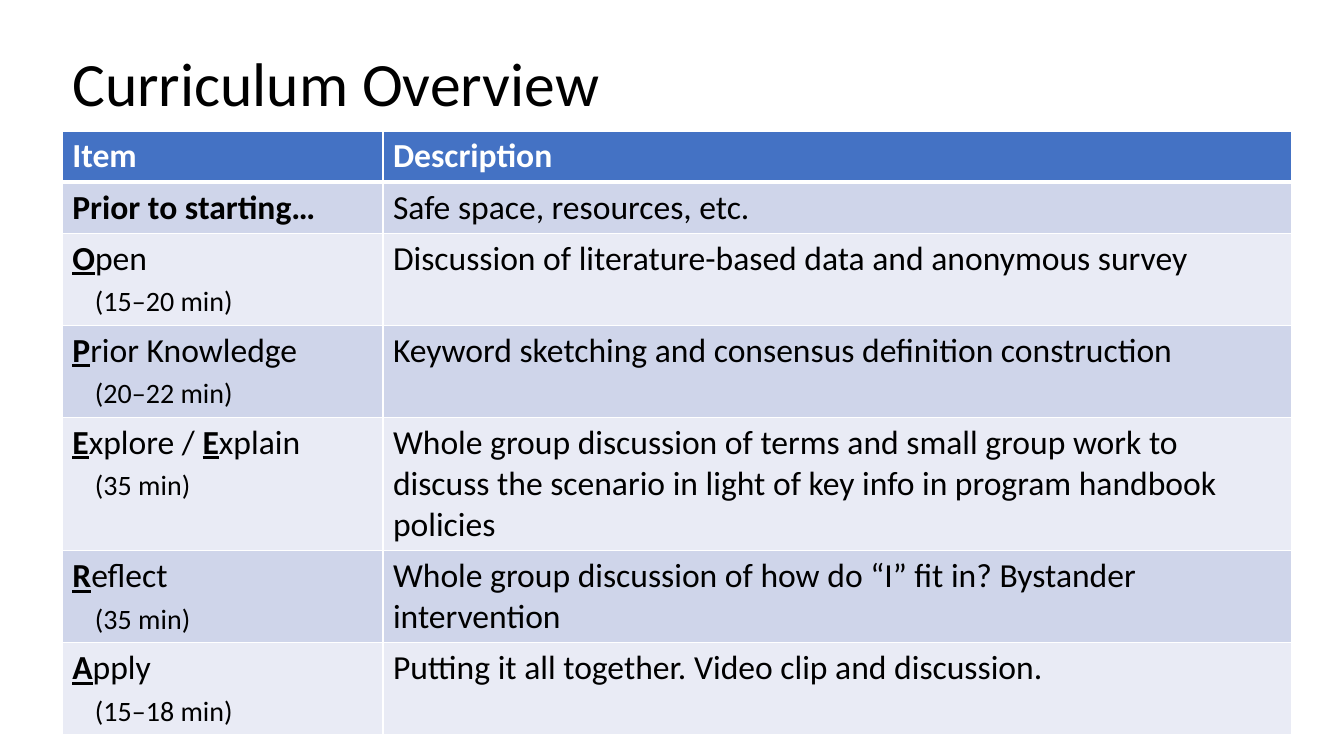
from lxml.etree import SubElement
from pptx import Presentation
from pptx.dml.color import RGBColor as RGB
from pptx.enum.text import MSO_ANCHOR as Anchor
from pptx.oxml.ns import qn
from pptx.util import Cm, Pt

FONT = "Calibri"
COLORS = {
    "text": "000000",
    "white": "FFFFFF",
    "header": "4472C4",
    "band_dark": "CFD5EA",
    "band_light": "E9EBF5",
}
HEADINGS = ("Item", "Description")
PREPARATION = ("Prior to starting…", "Safe space, resources, etc.")
STAGES = [
    ("Open", "(15–20 min)", "Discussion of literature-based data and anonymous survey"),
    ("Prior Knowledge", "(20–22 min)", "Keyword sketching and consensus definition construction"),
    ("Explore / Explain", "(35 min)",
     "Whole group discussion of terms and small group work to discuss the scenario "
     "in light of key info in program handbook policies"),
    ("Reflect", "(35 min)", "Whole group discussion of how do “I” fit in? Bystander intervention"),
    ("Apply", "(15–18 min)", "Putting it all together. Video clip and discussion."),
]
COLUMN_WIDTHS = (8.08, 22.91)
ROW_HEIGHTS = (1.29, 1.29, 2.32, 2.32, 3.36, 2.32, 2.32)


def set_font(paragraph, size, color="text", bold=False):
    """Set the font shared by all runs of a paragraph."""
    font = paragraph.font
    font.name, font.size, font.bold = FONT, Pt(size), bold
    font.color.rgb = RGB.from_string(COLORS[color])


def add_title(slide, left, top, width, height):
    """Add the slide title, centred vertically in its box."""
    frame = slide.shapes.add_textbox(Cm(left), Cm(top), Cm(width), Cm(height)).text_frame
    frame.word_wrap = True
    frame.vertical_anchor = Anchor.MIDDLE
    paragraph = frame.paragraphs[0]
    paragraph.text = "Curriculum Overview"
    paragraph.line_spacing = 0.9
    set_font(paragraph, 44)


def style_cell(cell, fill, bottom=1, top=1):
    """Give a cell white borders and a solid fill."""
    properties = cell._tc.get_or_add_tcPr()
    for side, width in (("L", 1), ("R", 1), ("T", top), ("B", bottom)):
        line = SubElement(properties, qn(f"a:ln{side}"), w=str(Pt(width)))
        color = SubElement(SubElement(line, qn("a:solidFill")), qn("a:srgbClr"))
        color.set("val", COLORS["white"])
    cell.fill.solid()
    cell.fill.fore_color.rgb = RGB.from_string(COLORS[fill])


def write_cell(cell, text, color="text", bold=False):
    """Write a single paragraph into a cell."""
    paragraph = cell.text_frame.paragraphs[0]
    paragraph.text = text
    set_font(paragraph, 24, color, bold)


def write_stage(cell, name, duration):
    """Write a stage name with marked initials above its indented duration."""
    paragraph = cell.text_frame.paragraphs[0]
    set_font(paragraph, 24)
    for index, part in enumerate(name.split(" / ")):
        if index:
            paragraph.add_run().text = " / "
        initial = paragraph.add_run()
        initial.text = part[0]
        initial.font.bold = initial.font.underline = True
        paragraph.add_run().text = part[1:]
    time_line = cell.text_frame.add_paragraph()
    time_line.text = duration
    time_line._p.get_or_add_pPr().set("marL", str(Cm(0.57)))
    time_line.space_before = Pt(4)
    set_font(time_line, 20)


def add_curriculum_table(slide, left, top):
    """Add the table of curriculum stages with its top left corner at the given place."""
    table = slide.shapes.add_table(
        len(ROW_HEIGHTS), len(COLUMN_WIDTHS), Cm(left), Cm(top),
        Cm(sum(COLUMN_WIDTHS)), Cm(sum(ROW_HEIGHTS))).table
    for column, width in zip(table.columns, COLUMN_WIDTHS):
        column.width = Cm(width)
    for index, (row, height) in enumerate(zip(table.rows, ROW_HEIGHTS)):
        row.height = Cm(height)
        fill = "header" if index == 0 else "band_dark" if index % 2 else "band_light"
        for cell in row.cells:
            style_cell(cell, fill, 3 if index == 0 else 1, 3 if index == 1 else 1)
    for column, heading in enumerate(HEADINGS):
        write_cell(table.cell(0, column), heading, "white", True)
        write_cell(table.cell(1, column), PREPARATION[column], bold=column == 0)
    for row, (name, duration, description) in enumerate(STAGES, start=2):
        write_stage(table.cell(row, 0), name, duration)
        write_cell(table.cell(row, 1), description)


def main():
    """Build the curriculum slide and save it."""
    presentation = Presentation()
    presentation.slide_width, presentation.slide_height = Cm(33.87), Cm(19.05)
    slide = presentation.slides.add_slide(presentation.slide_layouts[6])
    add_title(slide, 1.57, 0.33, 29.79, 3.68)
    add_curriculum_table(slide, 1.57, 3.3)
    presentation.save("out.pptx")


if __name__ == "__main__":
    main()
